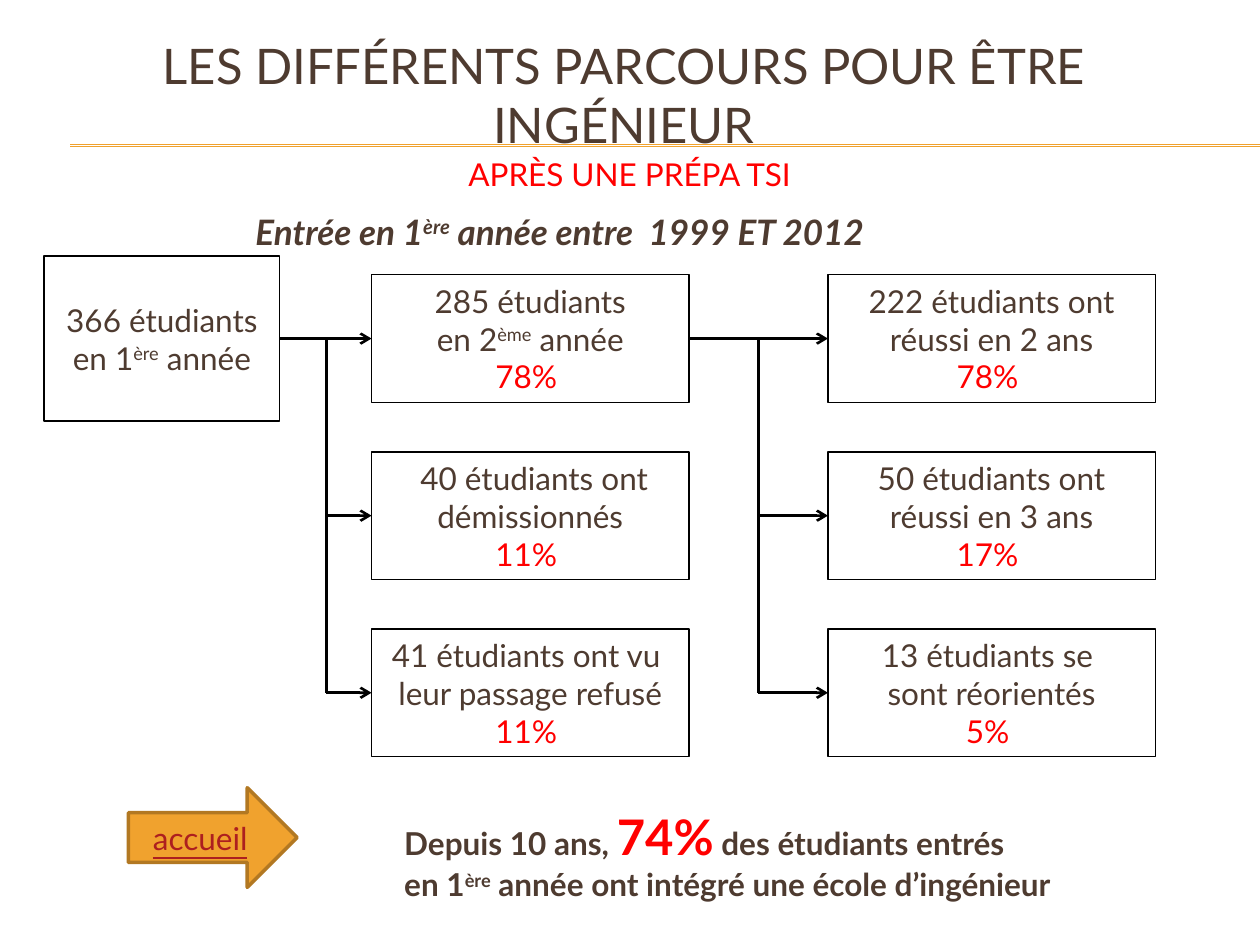
"""Build a slide showing the outcomes of students entering a TSI preparatory class."""
from lxml import etree
from pptx import Presentation
from pptx.dml.color import RGBColor
from pptx.enum.shapes import MSO_CONNECTOR, MSO_SHAPE
from pptx.enum.text import MSO_ANCHOR, MSO_AUTO_SIZE, PP_ALIGN
from pptx.oxml.ns import qn
from pptx.util import Cm, Pt

STRAIGHT = MSO_CONNECTOR.STRAIGHT
RECTANGLE, RIGHT_ARROW = MSO_SHAPE.RECTANGLE, MSO_SHAPE.RIGHT_ARROW
TOP, MIDDLE = MSO_ANCHOR.TOP, MSO_ANCHOR.MIDDLE
LEFT, CENTER = PP_ALIGN.LEFT, PP_ALIGN.CENTER
NO_AUTOFIT = MSO_AUTO_SIZE.NONE
LEFT_SIDE, RIGHT_SIDE = 1, 3

FONT = "Lato"
COLORS = {
    "text": "4E3B30", "red": "FF0000", "black": "000000",
    "orange": "F0A22E", "brown": "B27822", "link": "AD1F1F",
}
STYLES = {
    "title": {"size": 28},
    "body": {},
    "super": {"superscript": True},
    "red": {"color": "red"},
    "heading": {"size": 20, "bold": True, "italic": True},
    "heading super": {"size": 20, "bold": True, "italic": True, "superscript": True},
    "bold": {"bold": True},
    "bold super": {"bold": True, "superscript": True},
    "figure": {"size": 28, "bold": True, "color": "red"},
    "link": {"color": "link", "underline": True},
}

TITLE = [[("LES DIFFÉRENTS PARCOURS POUR ÊTRE INGÉNIEUR", "title")]]
SUBTITLE = [[("APRÈS UNE PRÉPA TSI ", "red")]]
HEADING = [[("Entrée en 1", "heading"), ("ère", "heading super"),
            (" année entre  1999 ET 2012", "heading")]]
CONCLUSION = [
    [("Depuis 10 ans, ", "bold"), ("74%", "figure"), (" des étudiants entrés", "bold")],
    [("en 1", "bold"), ("ère", "bold super"),
     (" année ont intégré une école d’ingénieur", "bold")],
]
HOME = [[("accueil", "link")]]
ENTRY = [[("366 étudiants", "body")],
         [("en 1", "body"), ("ère", "super"), (" année", "body")]]
SECOND_YEAR = [
    [[("285 étudiants", "body")],
     [("en 2", "body"), ("ème", "super"), (" année", "body")], [("78% ", "red")]],
    [[(" 40 étudiants ont", "body")], [("démissionnés", "body")], [("11% ", "red")]],
    [[("41 étudiants ont vu ", "body")], [("leur passage refusé", "body")],
     [("11% ", "red")]],
]
RESULTS = [
    [[("222 étudiants ont", "body")], [("réussi en 2 ans", "body")], [("78% ", "red")]],
    [[("50 étudiants ont", "body")], [("réussi en 3 ans", "body")], [("17% ", "red")]],
    [[("13 étudiants se ", "body")], [("sont réorientés", "body")], [("5% ", "red")]],
]

ROW_TOP, ROW_PITCH, BOX_HEIGHT = 5.54, 3.57, 2.57
ENTRY_LEFT, ENTRY_WIDTH, ENTRY_HEIGHT = 0.89, 4.75, 3.33
COLUMNS = [
    {"left": 7.49, "width": 6.4, "trunk": 6.58, "boxes": SECOND_YEAR},
    {"left": 16.69, "width": 6.6, "trunk": 15.29, "boxes": RESULTS},
]
ROW_CENTERS = [ROW_TOP + BOX_HEIGHT / 2 + row * ROW_PITCH for row in range(3)]
RULES = [2.92, 2.95]


def color(name):
    return RGBColor.from_string(COLORS[name])


def write(shape, paragraphs, align=CENTER, anchor=MIDDLE):
    frame = shape.text_frame
    frame.word_wrap = True
    frame.auto_size = NO_AUTOFIT
    frame.vertical_anchor = anchor
    for index, parts in enumerate(paragraphs):
        paragraph = frame.add_paragraph() if index else frame.paragraphs[0]
        paragraph.alignment = align
        for text, style_name in parts:
            style = STYLES[style_name]
            run = paragraph.add_run()
            run.text = text
            font = run.font
            font.name = FONT
            font.size = Pt(style.get("size", 18))
            font.bold = style.get("bold", False)
            font.italic = style.get("italic", False)
            font.underline = style.get("underline", False)
            font.color.rgb = color(style.get("color", "text"))
            if style.get("superscript"):
                run._r.get_or_add_rPr().set("baseline", "30000")


def add_text(slide, bounds, paragraphs, align=LEFT, anchor=TOP):
    box = slide.shapes.add_textbox(*map(Cm, bounds))
    write(box, paragraphs, align, anchor)


def add_box(slide, kind, bounds, paragraphs, fill=None, line="black", width=0.75):
    shape = slide.shapes.add_shape(kind, *map(Cm, bounds))
    shape.shadow.inherit = False
    if fill:
        shape.fill.solid()
        shape.fill.fore_color.rgb = color(fill)
    else:
        shape.fill.background()
    shape.line.color.rgb = color(line)
    shape.line.width = Pt(width)
    write(shape, paragraphs)
    return shape


def add_line(slide, start, end, line="black", width=1.5, arrow=False):
    connector = slide.shapes.add_connector(STRAIGHT, *map(Cm, start + end))
    connector.line.color.rgb = color(line)
    connector.line.width = Pt(width)
    if arrow:
        etree.SubElement(connector.line._get_or_add_ln(), qn("a:tailEnd"), type="arrow")
    etree.SubElement(connector._element.spPr, qn("a:effectLst"))
    return connector


def add_flow(slide):
    entry_top = ROW_CENTERS[0] - ENTRY_HEIGHT / 2
    source = add_box(slide, RECTANGLE,
                     (ENTRY_LEFT, entry_top, ENTRY_WIDTH, ENTRY_HEIGHT), ENTRY)
    source_right = ENTRY_LEFT + ENTRY_WIDTH
    for column in COLUMNS:
        left, trunk = column["left"], column["trunk"]
        boxes = []
        for row, (center, paragraphs) in enumerate(zip(ROW_CENTERS, column["boxes"])):
            bounds = (left, center - BOX_HEIGHT / 2, column["width"], BOX_HEIGHT)
            box = add_box(slide, RECTANGLE, bounds, paragraphs)
            start = trunk if row else source_right
            connector = add_line(slide, (start, center), (left, center), arrow=True)
            if row == 0:
                connector.begin_connect(source, RIGHT_SIDE)
            connector.end_connect(box, LEFT_SIDE)
            boxes.append(box)
        add_line(slide, (trunk, ROW_CENTERS[-1]), (trunk, ROW_CENTERS[0]))
        source, source_right = boxes[0], left + column["width"]


def main():
    presentation = Presentation()
    presentation.slide_width, presentation.slide_height = Cm(25.4), Cm(19.05)
    slide = presentation.slides.add_slide(presentation.slide_layouts[5])
    for height in RULES:
        add_line(slide, (1.42, height), (25.4, height), "orange", 0.75)
    title = slide.shapes.title
    title.left, title.top, title.width, title.height = map(Cm, (0.51, 0.74, 24.13, 2.34))
    write(title, TITLE)
    add_text(slide, (0.71, 2.34, 24.13, 2.34), SUBTITLE, CENTER, MIDDLE)
    add_text(slide, (4.9, 4.11, 16.79, 1.12), HEADING)
    add_flow(slide)
    add_text(slide, (7.9, 16.13, 14.91, 2.24), CONCLUSION)
    add_box(slide, RIGHT_ARROW, (2.59, 15.88, 3.4, 2.01), HOME, "orange", "brown", 2)
    presentation.save("out.pptx")


if __name__ == "__main__":
    main()
